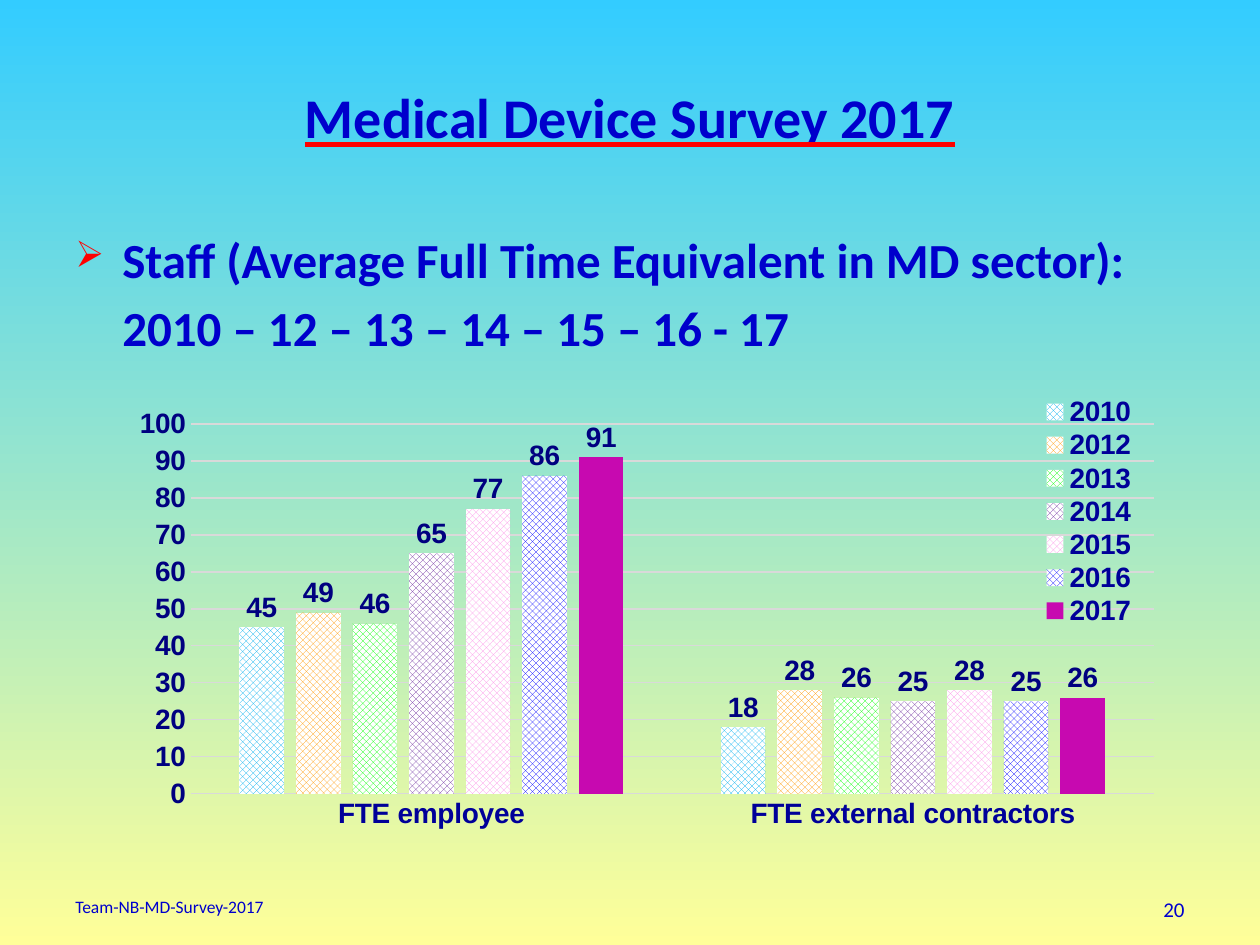
from lxml import etree
from pptx import Presentation
from pptx.chart.data import CategoryChartData
from pptx.dml.color import RGBColor
from pptx.enum.chart import XL_CHART_TYPE, XL_LABEL_POSITION, XL_LEGEND_POSITION, XL_TICK_MARK
from pptx.enum.dml import MSO_PATTERN
from pptx.enum.text import MSO_ANCHOR, PP_ALIGN
from pptx.oxml import parse_xml
from pptx.oxml.ns import nsdecls, qn
from pptx.util import Pt

LEFT, CENTER, RIGHT = PP_ALIGN.LEFT, PP_ALIGN.CENTER, PP_ALIGN.RIGHT
TOP, MIDDLE = MSO_ANCHOR.TOP, MSO_ANCHOR.MIDDLE
COLUMNS = XL_CHART_TYPE.COLUMN_CLUSTERED
LEGEND_BOTTOM = XL_LEGEND_POSITION.BOTTOM
OUTSIDE_END = XL_LABEL_POSITION.OUTSIDE_END
NO_TICK = XL_TICK_MARK.NONE
CHECK = MSO_PATTERN.LARGE_CHECKER_BOARD

SKY = RGBColor(0x33, 0xCC, 0xFF)
YELLOW = RGBColor(0xFF, 0xFF, 0x99)
BLUE = RGBColor(0x00, 0x00, 0xCC)
RED = RGBColor(0xFF, 0x00, 0x00)
DARK_BLUE = RGBColor(0x00, 0x00, 0x99)
NAVY = RGBColor(0x00, 0x00, 0x80)
GRID = RGBColor(0xD9, 0xD9, 0xD9)
WHITE = RGBColor(0xFF, 0xFF, 0xFF)
MAGENTA = RGBColor(0xC7, 0x09, 0xB0)

CATEGORIES = ["FTE employee", "FTE external contractors"]
STAFF = [
    ("2010", (45, 18), RGBColor(0x00, 0xB0, 0xF0)),
    ("2012", (49, 28), RGBColor(0xFF, 0x99, 0x00)),
    ("2013", (46, 26), RGBColor(0x00, 0xFF, 0x00)),
    ("2014", (65, 25), RGBColor(0x70, 0x30, 0xA0)),
    ("2015", (77, 28), RGBColor(0xFD, 0x91, 0xE8)),
    ("2016", (86, 25), RGBColor(0x01, 0x01, 0xFF)),
    ("2017", (91, 26), MAGENTA),
]


def px(n):
    return int(n * 914400 / 126)


def set_font(font, size, color, bold=False, name="Arial"):
    font.size, font.bold, font.name = Pt(size), bold, name
    font.color.rgb = color


def add_bullet(p, char, color, percent):
    pPr = p._p.get_or_add_pPr()
    clr = etree.SubElement(pPr, qn("a:buClr"))
    etree.SubElement(clr, qn("a:srgbClr"), val=str(color))
    etree.SubElement(pPr, qn("a:buSzPct"), val=str(percent * 1000))
    etree.SubElement(pPr, qn("a:buChar"), char=char)


def add_text(s, box, lines, size, bold=False, align=LEFT, anchor=TOP,
             underline=None, bullet=None, indent=0, gap=0):
    """Add a text box; a bullet goes on the first line only."""
    tf = s.shapes.add_textbox(*map(px, box)).text_frame
    tf.word_wrap, tf.vertical_anchor = True, anchor
    for i, line in enumerate(lines):
        p = tf.paragraphs[0] if i == 0 else tf.add_paragraph()
        p.alignment = align
        if i:
            p.space_before = Pt(gap)
        if indent:
            pPr = p._p.get_or_add_pPr()
            pPr.set("marL", str(px(indent)))
            pPr.set("indent", str(px(-indent if bullet and i == 0 else 0)))
        if bullet and i == 0:
            add_bullet(p, bullet, RED, 75)
        r = p.add_run()
        r.text = line
        set_font(r.font, size, BLUE, bold, "Calibri")
        if underline is not None:
            r.font.underline = True
            r.font._element.find(qn("a:latin")).addprevious(parse_xml(
                f'<a:uFill {nsdecls("a")}><a:solidFill><a:srgbClr val="{underline}"/>'
                '</a:solidFill></a:uFill>'))


def manual_layout(x, y, w, h, inner=False):
    target = '<c:layoutTarget val="inner"/>' if inner else ""
    values = "".join(f'<c:{k} val="{v}"/>' for k, v in zip("xywh", (x, y, w, h)))
    return parse_xml(
        f'<c:layout {nsdecls("c")}><c:manualLayout>{target}<c:xMode val="edge"/>'
        f'<c:yMode val="edge"/>{values}</c:manualLayout></c:layout>')


def style_axes(chart):
    for axis, color in ((chart.category_axis, DARK_BLUE), (chart.value_axis, NAVY)):
        axis.major_tick_mark = axis.minor_tick_mark = NO_TICK
        set_font(axis.tick_labels.font, 16, color, True)
    line = chart.category_axis.format.line
    line.color.rgb, line.width = GRID, Pt(0.75)

    values = chart.value_axis
    values.minimum_scale, values.maximum_scale, values.major_unit = 0, 100, 10
    values.tick_labels.number_format = "0"
    values.tick_labels.number_format_is_linked = False
    values.format.line.fill.background()
    grid = values.major_gridlines.format.line
    grid.color.rgb, grid.width = GRID, Pt(0.75)


def style_series(series, color):
    fill = series.format.fill
    if color == MAGENTA:
        fill.solid()
        fill.fore_color.rgb = color
    else:
        fill.patterned()
        fill.pattern = CHECK
        fill.fore_color.rgb, fill.back_color.rgb = color, WHITE
    series.format.line.fill.background()
    labels = series.data_labels
    labels.show_value, labels.position = True, OUTSIDE_END
    labels.number_format, labels.number_format_is_linked = "0", False
    set_font(labels.font, 16, NAVY, True)


def add_staff_chart(s, box):
    data = CategoryChartData(number_format="0")
    data.categories = CATEGORIES
    for name, values, _ in STAFF:
        data.add_series(name, values)
    chart = s.shapes.add_chart(COLUMNS, *map(px, box), data).chart
    chart.has_title = False
    set_font(chart.font, 10, RGBColor(0, 0, 0))
    style_axes(chart)

    plot = chart.plots[0]
    plot.gap_width, plot.overlap, plot.vary_by_categories = 219, -27, False
    for series, (_, _, color) in zip(plot.series, STAFF):
        style_series(series, color)

    # Legend stacked at the upper right, over the plot
    chart.has_legend = True
    legend = chart.legend
    legend.position, legend.include_in_layout = LEGEND_BOTTOM, False
    set_font(legend.font, 16, DARK_BLUE, True)
    element = legend._element
    for old in element.findall(qn("c:layout")):
        element.remove(old)
    element.find(qn("c:legendPos")).addnext(manual_layout(0.85, 0.09, 0.1, 0.47))

    area = chart._chartSpace.chart.plotArea
    for old in area.findall(qn("c:layout")):
        area.remove(old)
    area.insert(0, manual_layout(0.07, 0.15, 0.89, 0.74, inner=True))


def set_background(s):
    fill = s.background.fill
    fill.gradient()
    fill.gradient_angle = 270
    for stop, position, color in zip(fill.gradient_stops, (0, 1), (SKY, YELLOW)):
        stop.position, stop.color.rgb = position, color


def main():
    prs = Presentation()
    prs.slide_width, prs.slide_height = px(1260), px(945)
    s = prs.slides.add_slide(prs.slide_layouts[6])
    set_background(s)

    # Title and heading
    add_text(s, (63, 38, 1134, 157), ["Medical Device Survey 2017"], 32, bold=True,
             align=CENTER, anchor=MIDDLE, underline=RED)
    add_text(s, (63, 223, 1134, 103),
             ["Staff (Average Full Time Equivalent in MD sector):",
              "2010 – 12 – 13 – 14 – 15 – 16 - 17"],
             28, bold=True, bullet="➢", indent=47, gap=5.6)

    # Staff numbers
    add_staff_chart(s, (115, 349, 1082, 500))

    # Footer
    add_text(s, (63, 890, 399, 37), ["Team-NB-MD-Survey-2017"], 10)
    add_text(s, (903, 890, 294, 37), ["20"], 12, align=RIGHT)
    prs.save("out.pptx")


if __name__ == "__main__":
    main()
